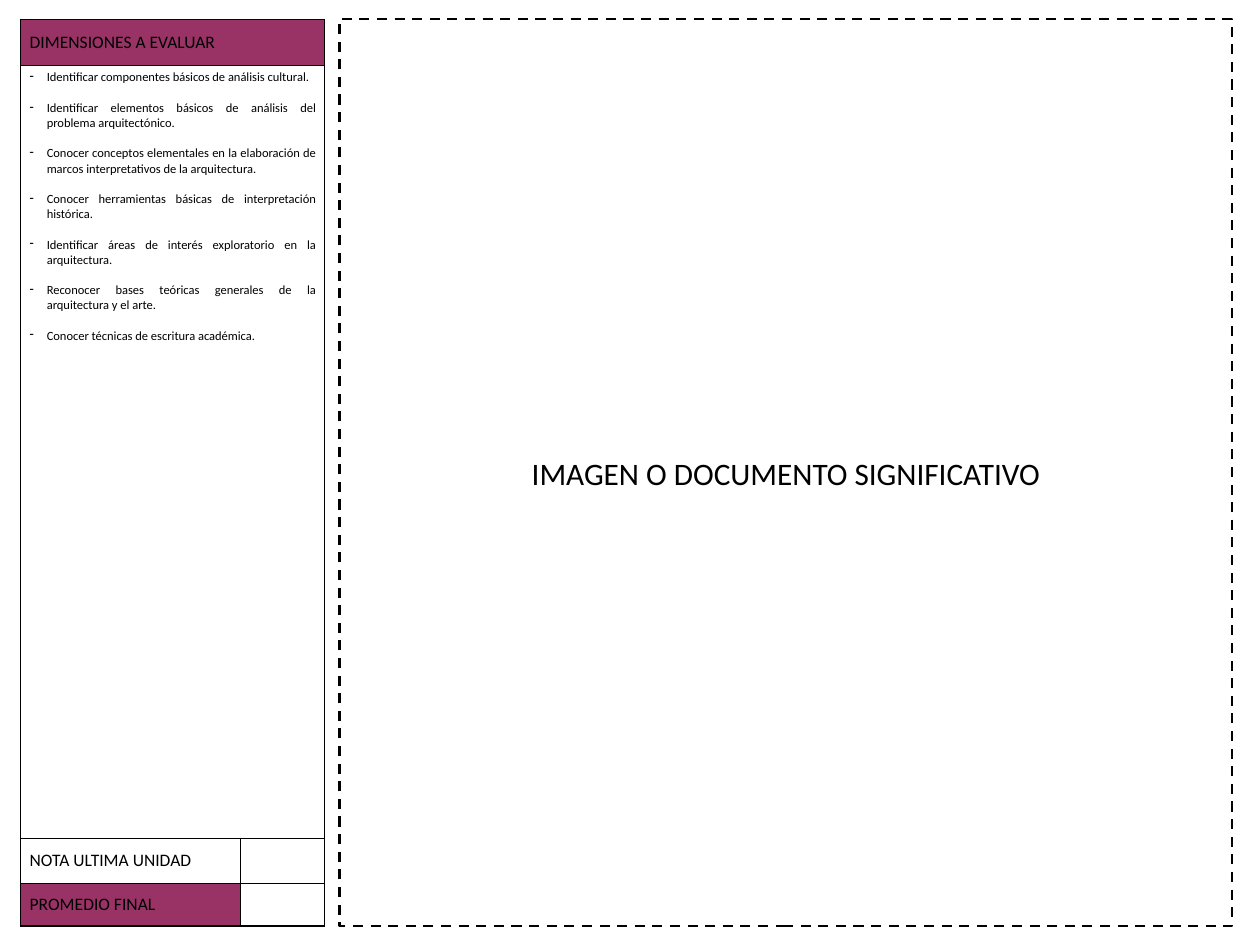
from lxml import etree
from pptx import Presentation
from pptx.dml.color import RGBColor
from pptx.enum.dml import MSO_LINE
from pptx.enum.shapes import MSO_SHAPE
from pptx.enum.text import MSO_ANCHOR, PP_ALIGN
from pptx.oxml.ns import qn
from pptx.util import Inches, Pt

RECT = MSO_SHAPE.RECTANGLE
DASH = MSO_LINE.DASH
TOP, MIDDLE = MSO_ANCHOR.TOP, MSO_ANCHOR.MIDDLE
CENTER, JUSTIFY = PP_ALIGN.CENTER, PP_ALIGN.JUSTIFY

COLORS = {"ink": "000000", "plum": "993366", "paper": "FFFFFF"}
GOALS = [
    "Identificar componentes básicos de análisis cultural.",
    "Identificar elementos básicos de análisis del problema arquitectónico.",
    "Conocer conceptos elementales en la elaboración de marcos interpretativos de la arquitectura.",
    "Conocer herramientas básicas de interpretación histórica.",
    "Identificar áreas de interés exploratorio en la arquitectura.",
    "Reconocer bases teóricas generales de la arquitectura y el arte.",
    "Conocer técnicas de escritura académica.",
]


class Sheet:
    def __init__(self, slide, font="Calibri"):
        self.slide = slide
        self.font = font

    def color(self, name):
        return RGBColor.from_string(COLORS[name])

    def text(self, para, words, size, align):
        para.alignment = align
        run = para.add_run()
        run.text = words
        run.font.name = self.font
        run.font.size = Pt(size)
        run.font.color.rgb = self.color("ink")

    def frame(self, box, words, size):
        shape = self.slide.shapes.add_shape(RECT, *map(Inches, box))
        shape.shadow.inherit = False
        shape.fill.background()
        shape.line.color.rgb = self.color("ink")
        shape.line.width = Pt(2)
        shape.line.dash_style = DASH
        area = shape.text_frame
        area.word_wrap = True
        area.vertical_anchor = MIDDLE
        self.text(area.paragraphs[0], words, size, CENTER)

    def table(self, left, top, cols, rows):
        size = map(Inches, (left, top, sum(cols), sum(rows)))
        grid = self.slide.shapes.add_table(len(rows), len(cols), *size).table
        grid.first_row = grid.horz_banding = False
        for col, width in zip(grid.columns, cols):
            col.width = Inches(width)
        for row, height in zip(grid.rows, rows):
            row.height = Inches(height)
        return grid

    def cell(self, cell, fill, edges, anchor=MIDDLE):
        props = cell._tc.get_or_add_tcPr()
        for side, width in zip("LRTB", edges):
            line = etree.SubElement(props, qn(f"a:ln{side}"), w=str(Pt(width)))
            solid = etree.SubElement(line, qn("a:solidFill"))
            etree.SubElement(solid, qn("a:srgbClr"), val=COLORS["ink"])
        cell.vertical_anchor = anchor
        if fill:
            cell.fill.solid()
            cell.fill.fore_color.rgb = self.color(fill)
        else:
            cell.fill.background()

    def label(self, cell, words, size=14):
        self.text(cell.text_frame.paragraphs[0], words, size, JUSTIFY)

    def bullets(self, cell, items, size, gap):
        area = cell.text_frame
        for i, item in enumerate(items):
            para = area.paragraphs[0] if i == 0 else area.add_paragraph()
            self.text(para, item, size, JUSTIFY)
            if i < len(items) - 1:
                para.space_after = Pt(gap)
            props = para._p.get_or_add_pPr()
            props.set("marL", str(Inches(0.19)))
            props.set("indent", str(Inches(-0.19)))
            etree.SubElement(props, qn("a:buChar"), char="-")


def main():
    deck = Presentation()
    deck.slide_width, deck.slide_height = Inches(14), Inches(10.5)
    sheet = Sheet(deck.slides.add_slide(deck.slide_layouts[6]))

    sheet.frame((3.77, 0.21, 9.92, 10.08), "IMAGEN O DOCUMENTO SIGNIFICATIVO", 25)

    grid = sheet.table(0.23, 0.21, (2.44, 0.94), (0.52, 8.59, 0.49, 0.48))
    for row in (0, 1):
        grid.cell(row, 0).merge(grid.cell(row, 1))
    for col in (0, 1):
        sheet.cell(grid.cell(0, col), "plum", (1, 1, 0.5, 1))
        sheet.cell(grid.cell(1, col), None, (1, 1, 1, 1), TOP)
    sheet.cell(grid.cell(2, 0), "paper", (1, 0.5, 1, 0.5))
    sheet.cell(grid.cell(2, 1), None, (0.5, 1, 0.5, 0.5))
    sheet.cell(grid.cell(3, 0), "plum", (1, 0.5, 0.5, 1))
    sheet.cell(grid.cell(3, 1), None, (0.5, 1, 0.5, 1))

    sheet.label(grid.cell(0, 0), "DIMENSIONES A EVALUAR")
    sheet.bullets(grid.cell(1, 0), GOALS, 10, 12.2)
    sheet.label(grid.cell(2, 0), "NOTA ULTIMA UNIDAD ")
    sheet.label(grid.cell(3, 0), "PROMEDIO FINAL")

    deck.save("out.pptx")


if __name__ == "__main__":
    main()
